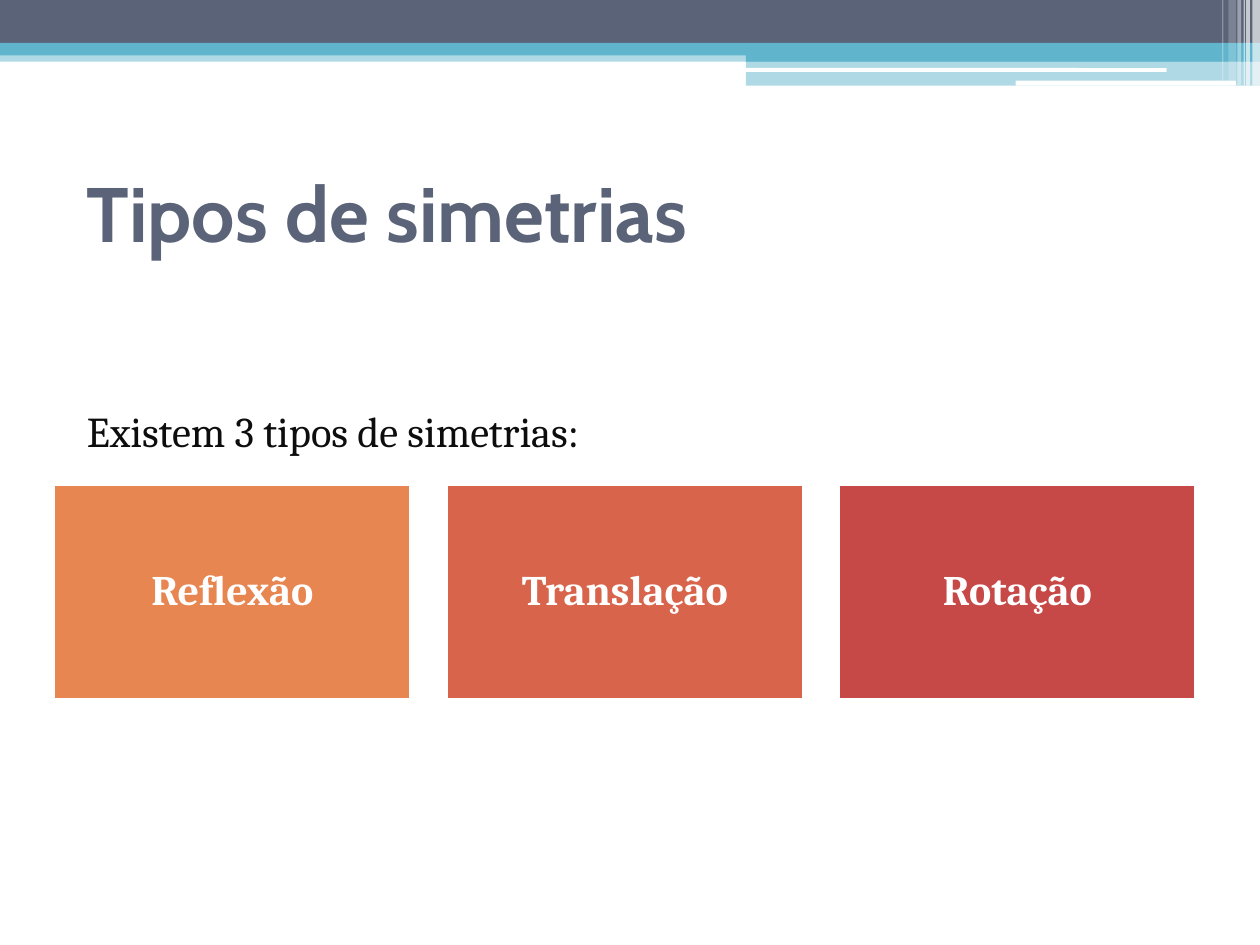
import pptx
import pptx.util
import pptx.dml.color
import pptx.enum.shapes
import pptx.enum.text
import pptx.oxml.ns
import lxml.etree

Inches = pptx.util.Inches
Pt = pptx.util.Pt
SHAPE = pptx.enum.shapes.MSO_SHAPE
ALIGN = pptx.enum.text.PP_ALIGN
ANCHOR = pptx.enum.text.MSO_ANCHOR


def rgb(value):
    return pptx.dml.color.RGBColor.from_string(value)


def add_box(kind, x, y, w, h, color, alpha=100):
    sp = s.shapes.add_shape(kind, Inches(x), Inches(y), Inches(w), Inches(h))
    sp.shadow.inherit = False
    sp.fill.solid()
    sp.fill.fore_color.rgb = rgb(color)
    sp.line.fill.background()
    if alpha < 100:
        clr = sp.fill._xPr.find(".//" + pptx.oxml.ns.qn("a:srgbClr"))
        lxml.etree.SubElement(clr, pptx.oxml.ns.qn("a:alpha"), val=str(alpha * 1000))
    return sp


prs = pptx.Presentation()
prs.slide_width = Inches(10)
prs.slide_height = Inches(7.5)
s = prs.slides.add_slide(prs.slide_layouts[5])

bands = [
    (0, 0.4, 10, 0.09, "60B5CC", 50),
    (0, 0, 10, 0.34, "5A6378", 100),
    (0, 0.34, 10, 0.1, "60B5CC", 100),
    (5.92, 0.39, 4.08, 0.1, "60B5CC", 100),
    (5.92, 0.48, 4.08, 0.2, "60B5CC", 50),
]
for band in bands:
    add_box(SHAPE.RECTANGLE, *band)

for x, y, w, h in [(5.91, 0.54, 3.35, 0.03), (8.06, 0.64, 1.75, 0.04)]:
    add_box(SHAPE.ROUNDED_RECTANGLE, x, y, w, h, "FFFFFF")

stripes = [
    (9.94, 0.06, 0.68, 65),
    (9.89, 0.03, 0.68, 65),
    (9.87, 0.01, 0.68, 60),
    (9.82, 0.03, 0.68, 40),
    (9.75, 0.06, 0.64, 20),
    (9.7, 0.01, 0.64, 30),
]
for x, w, h, alpha in stripes:
    add_box(SHAPE.RECTANGLE, x, 0, w, h, "FFFFFF", alpha)

title = s.shapes.title
for name, value in dict(left=0.59, top=1.26, width=9, height=2.79).items():
    setattr(title, name, Inches(value))
tf = title.text_frame
tf.word_wrap = True
tf.auto_size = pptx.enum.text.MSO_AUTO_SIZE.NONE
tf.vertical_anchor = ANCHOR.TOP
tf.text = "Tipos de simetrias\nExistem 3 tipos de simetrias:"
formats = [
    (dict(name="Cabin", size=Pt(44.1), bold=True), "5A6378", 0),
    (dict(name="Cambria", size=Pt(24.3), bold=False), "0D0D0D", 84),
]
for p, (font, color, before) in zip(tf.paragraphs, formats):
    p.alignment = ALIGN.LEFT
    p.space_before = Pt(before)
    for name, value in font.items():
        setattr(p.font, name, value)
    p.font.color.rgb = rgb(color)

card_w, card_gap = 2.83, 0.285
cards = [("Reflexão", "E88651"), ("Translação", "D8644B"), ("Rotação", "C64847")]
for i, (label, color) in enumerate(cards):
    sp = add_box(SHAPE.RECTANGLE, 0.43 + i * (card_w + card_gap), 3.85, card_w, 1.7, color)
    sp.line.color.rgb = rgb("FFFFFF")
    sp.line.width = Pt(1.5)
    tf = sp.text_frame
    tf.word_wrap = True
    tf.vertical_anchor = ANCHOR.MIDDLE
    for side in ("left", "top", "right", "bottom"):
        setattr(tf, "margin_" + side, Inches(0.1))
    p = tf.paragraphs[0]
    p.alignment = ALIGN.CENTER
    p.line_spacing = 0.9
    r = p.add_run()
    r.text = label
    for name, value in dict(name="Cambria", size=Pt(24), bold=True).items():
        setattr(r.font, name, value)
    r.font.color.rgb = rgb("FFFFFF")

prs.save("out.pptx")
